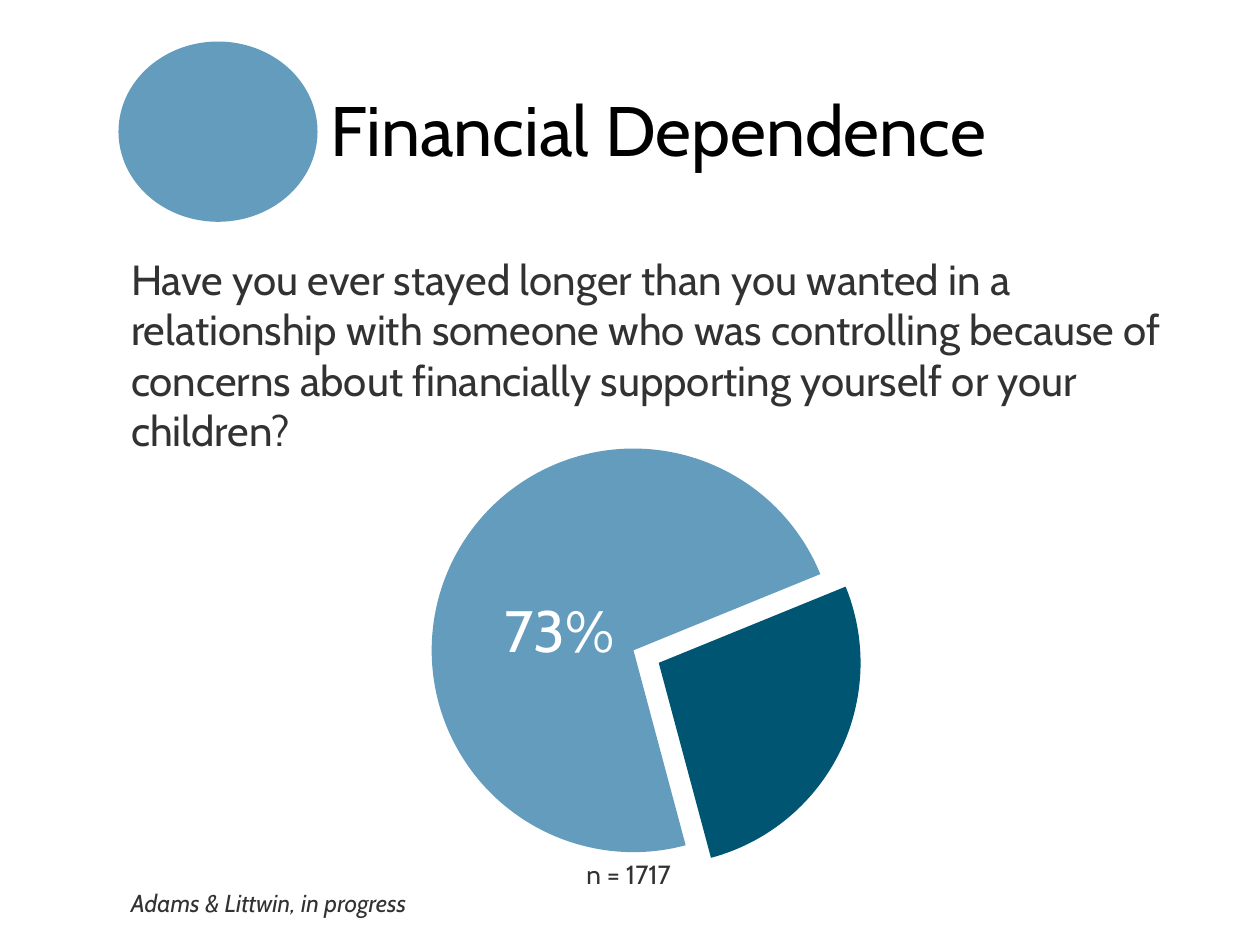
"""Build the Financial Dependence survey slide."""
from dataclasses import dataclass

from lxml.etree import SubElement
from pptx import Presentation
from pptx.chart.data import CategoryChartData
from pptx.dml.color import RGBColor
from pptx.enum.chart import XL_CHART_TYPE
from pptx.enum.shapes import MSO_SHAPE
from pptx.enum.text import MSO_ANCHOR, MSO_AUTO_SIZE, PP_ALIGN
from pptx.oxml import parse_xml
from pptx.oxml.ns import nsdecls, qn
from pptx.util import Inches, Pt

FONT = "Cabin"
COLORS = {"black": "000000", "gray": "323232", "white": "FFFFFF",
          "blue": "649CBD", "teal": "005572"}
WIDTH, HEIGHT = Inches(10), Inches(7.5)
MARGIN = 9.4


@dataclass(frozen=True)
class Box:
    """Hold a place as percentages of the slide's width and height."""
    left: float
    top: float
    width: float
    height: float

    def emu(self) -> tuple[int, int, int, int]:
        """Return left, top, width and height as slide lengths."""
        return (int(WIDTH * self.left / 100), int(HEIGHT * self.top / 100),
                int(WIDTH * self.width / 100), int(HEIGHT * self.height / 100))


@dataclass(frozen=True)
class Label:
    """Describe a free text box."""
    text: str
    box: Box
    size: float
    color: str = "gray"
    align: PP_ALIGN = PP_ALIGN.LEFT
    italic: bool = False


LABELS = (
    Label("n = 1717", Box(41.2, 90.13, 17.4, 4.67), 15, align=PP_ALIGN.CENTER),
    Label("73%", Box(36.2, 62.27, 16.4, 8.8), 33.3, "white", PP_ALIGN.CENTER),
    Label("Adams & Littwin, in progress", Box(MARGIN, 93.33, 67.5, 4.53), 14, italic=True),
)


def rgb(name: str) -> RGBColor:
    """Look up a palette colour."""
    return RGBColor.from_string(COLORS[name])


def write(sp, text: str, *, size: float, color: str = "gray",
          align: PP_ALIGN = PP_ALIGN.LEFT, italic: bool = False) -> None:
    """Put one formatted paragraph in a shape."""
    tf = sp.text_frame
    tf.word_wrap = True
    tf.auto_size = MSO_AUTO_SIZE.NONE
    tf.vertical_anchor = MSO_ANCHOR.TOP
    p = tf.paragraphs[0]
    p.alignment = align
    p.space_before = Pt(0)
    r = p.add_run()
    r.text = text
    r.font.name, r.font.size = FONT, Pt(size)
    r.font.italic = italic
    r.font.color.rgb = rgb(color)


def place(sp, box: Box) -> None:
    """Move a placeholder to a box."""
    sp.left, sp.top, sp.width, sp.height = box.emu()


def add_circle(s, box: Box) -> None:
    """Draw the plain ellipse beside the title."""
    sp = s.shapes.add_shape(MSO_SHAPE.OVAL, *box.emu())
    sp.shadow.inherit = False
    sp.fill.solid()
    sp.fill.fore_color.rgb = rgb("blue")
    sp.line.fill.background()


def add_pie(s, box: Box) -> None:
    """Add the pie chart with its smaller slice pulled out."""
    data = CategoryChartData()
    data.categories = ["1", "2"]
    data.add_series("Series 1", (73, 27))
    chart = s.shapes.add_chart(XL_CHART_TYPE.PIE, *box.emu(), data).chart
    chart.has_legend = chart.has_title = False
    chart.font.name, chart.font.size = FONT, Pt(10)
    chart.font.color.rgb = rgb("black")
    plot = chart.plots[0]
    plot.vary_by_categories = False
    for i, color in enumerate(("blue", "teal")):
        point = plot.series[0].points[i].format
        point.fill.solid()
        point.fill.fore_color.rgb = rgb(color)
        point.line.fill.background()
    pie = chart.element.find(".//" + qn("c:pieChart"))
    small = pie.findall(".//" + qn("c:dPt"))[1]
    small.find(qn("c:spPr")).addprevious(
        parse_xml(f'<c:explosion {nsdecls("c")} val="14"/>'))
    angle = pie.find(qn("c:firstSliceAng"))
    if angle is None:
        angle = SubElement(pie, qn("c:firstSliceAng"))
    angle.set("val", "165")
    area = pie.getparent()
    for old in area.findall(qn("c:layout")):
        area.remove(old)
    frame = {"x": 0.2, "y": 0.04, "w": 0.59, "h": 0.93}
    modes = "".join(f'<c:{k}Mode val="edge"/>' for k in "xy")
    sizes = "".join(f'<c:{k} val="{v}"/>' for k, v in frame.items())
    area.insert(0, parse_xml(
        f'<c:layout {nsdecls("c")}><c:manualLayout><c:layoutTarget val="inner"/>'
        f'{modes}{sizes}</c:manualLayout></c:layout>'))


def main() -> None:
    """Build and save the slide."""
    prs = Presentation()
    prs.slide_width, prs.slide_height = WIDTH, HEIGHT
    s = prs.slides.add_slide(prs.slide_layouts[1])
    title, body = s.shapes.title, s.placeholders[1]
    place(title, Box(25.2, 8.53, 66.4, 10.27))
    write(title, "Financial Dependence", size=40, color="black")
    place(body, Box(MARGIN, 26.13, 88.2, 17.47))
    pPr = body.text_frame.paragraphs[0]._p.get_or_add_pPr()
    pPr.set("marL", "0")
    pPr.set("indent", "0")
    SubElement(pPr, qn("a:buNone"))
    write(body, "Have you ever stayed longer than you wanted in a relationship with "
          "someone who was controlling because of concerns about financially "
          "supporting yourself or your children?", size=24)
    add_circle(s, Box(MARGIN, 4.4, 15.8, 19.07))
    add_pie(s, Box(23.4, 45.6, 54.3, 46))
    for label in LABELS:
        write(s.shapes.add_textbox(*label.box.emu()), label.text, size=label.size,
              color=label.color, align=label.align, italic=label.italic)
    prs.save("out.pptx")


if __name__ == "__main__":
    main()
